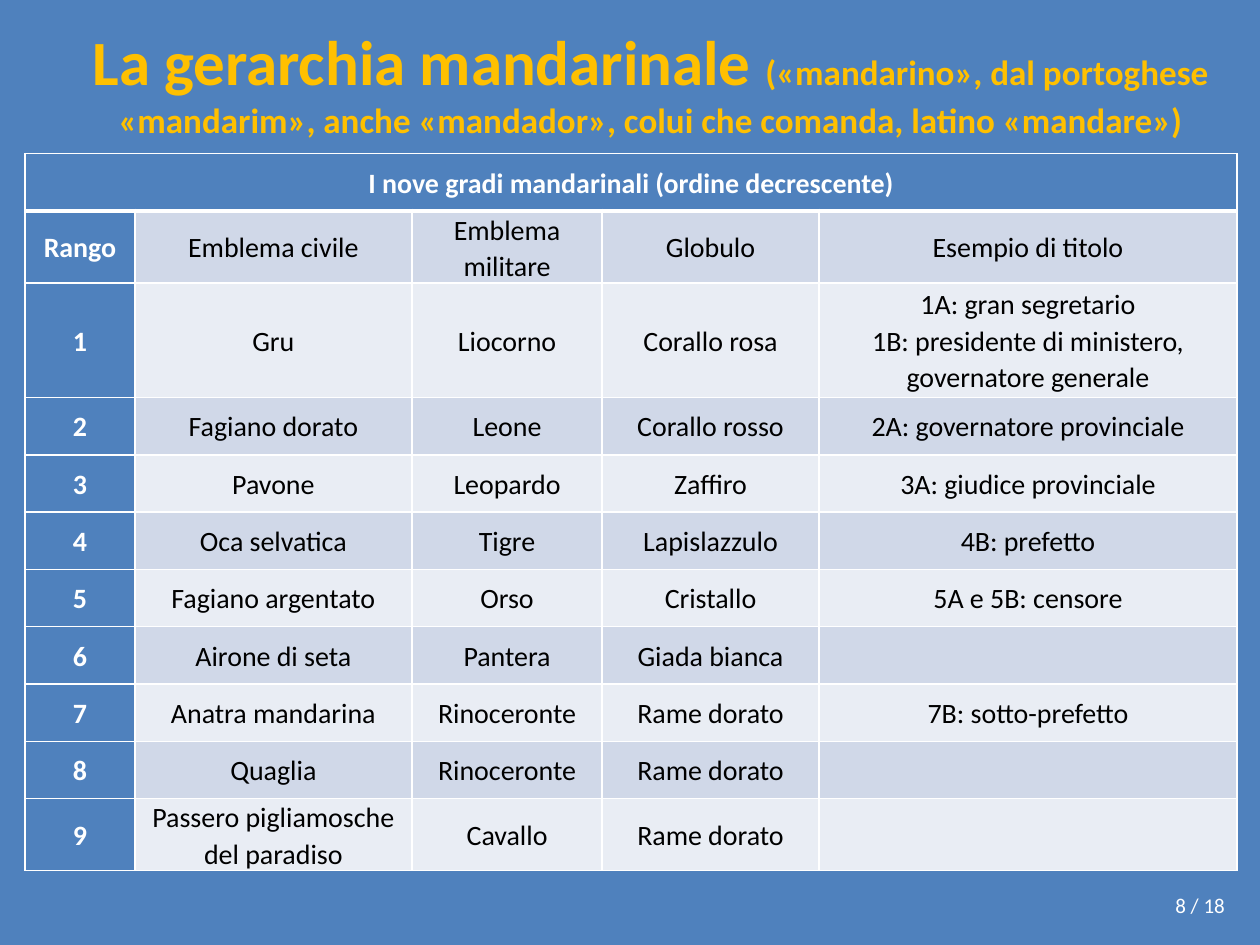
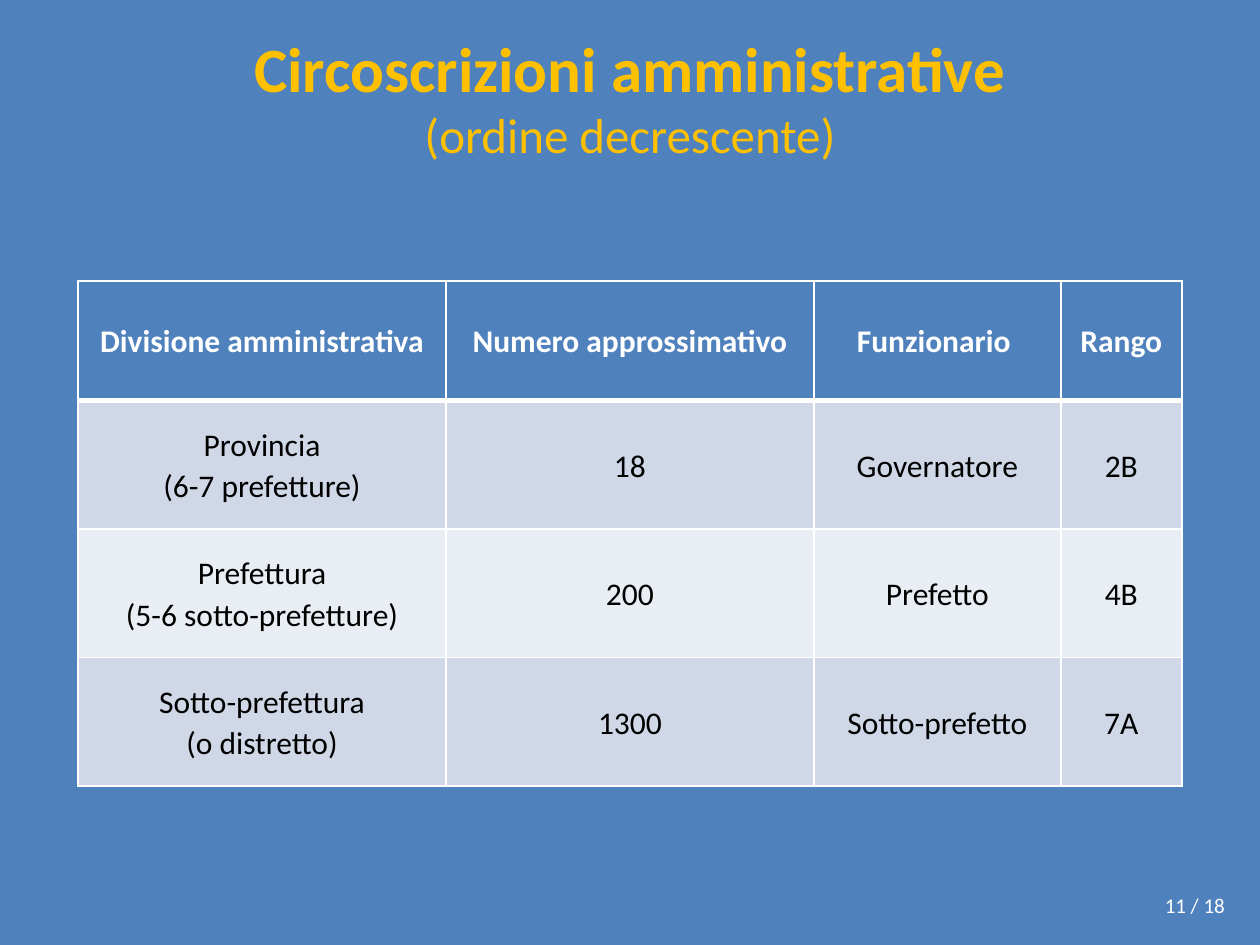
from dataclasses import dataclass

from lxml.etree import SubElement
from pptx import Presentation
from pptx.dml.color import RGBColor as Color
from pptx.enum.text import MSO_ANCHOR as Anchor, PP_ALIGN as Align
from pptx.oxml.ns import qn
from pptx.util import Inches, Pt


@dataclass(frozen=True)
class Theme:
    font: str = "Calibri"
    blue: str = "4F81BD"
    gold: str = "FFC000"
    white: str = "FFFFFF"
    black: str = "000000"
    bands: tuple = ("D0D8E8", "E9EDF4")
    title_size: int = 36
    subtitle_size: int = 28
    note_size: int = 20
    table_size: int = 18
    dense_table_size: int = 16
    page_size: int = 12
    line_spacing: float = 1.07
    thin_line: int = 1
    thick_line: int = 3


THEME = Theme()
PAGE_COUNT = 18

RANK_COLUMNS = (0.87, 2.2, 1.51, 1.72, 3.32)
RANK_ROW = 0.91 / 2
RANK_ROWS = [
    ("I nove gradi mandarinali (ordine decrescente)", "", "", "", ""),
    ("Rango", "Emblema civile", "Emblema militare", "Globulo", "Esempio di titolo"),
    ("1", "Gru", "Liocorno", "Corallo rosa",
     "1A: gran segretario\n1B: presidente di ministero, governatore generale"),
    ("2", "Fagiano dorato", "Leone", "Corallo rosso", "2A: governatore provinciale"),
    ("3", "Pavone", "Leopardo", "Zaffiro", "3A: giudice provinciale"),
    ("4", "Oca selvatica", "Tigre", "Lapislazzulo", "4B: prefetto"),
    ("5", "Fagiano argentato", "Orso", "Cristallo", "5A e 5B: censore"),
    ("6", "Airone di seta", "Pantera", "Giada bianca", ""),
    ("7", "Anatra mandarina", "Rinoceronte", "Rame dorato", "7B: sotto-prefetto"),
    ("8", "Quaglia", "Rinoceronte", "Rame dorato", ""),
    ("9", "Passero pigliamosche del paradiso", "Cavallo", "Rame dorato", ""),
]

DIVISION_COLUMNS = (2.92, 2.92, 1.96, 0.96)
DIVISION_ROWS = [
    ("Divisione amministrativa", "Numero approssimativo", "Funzionario ", "Rango"),
    ("Provincia\n(6-7 prefetture)", "18", "Governatore", "2B"),
    ("Prefettura\n(5-6 sotto-prefetture)", "200", "Prefetto", "4B"),
    ("Sotto-prefettura\n(o distretto)", "1300", "Sotto-prefetto", "7A"),
]


def add_run(paragraph, text, size, color, bold=False):
    run = paragraph.add_run()
    run.text = text
    run.font.name = THEME.font
    run.font.size = Pt(size)
    run.font.bold = bold
    run.font.color.rgb = Color.from_string(color)


def add_text_box(slide, box, alignment):
    """Add a middle-anchored text box and return its first paragraph."""
    frame = slide.shapes.add_textbox(*map(Inches, box)).text_frame
    frame.word_wrap = True
    frame.vertical_anchor = Anchor.MIDDLE
    paragraph = frame.paragraphs[0]
    paragraph.alignment = alignment
    return paragraph


def add_title(slide, box, title, detail, detail_size, detail_bold, new_line):
    paragraph = add_text_box(slide, box, Align.CENTER)
    add_run(paragraph, title, THEME.title_size, THEME.gold, bold=True)
    if new_line:
        paragraph.add_line_break()
    add_run(paragraph, detail, detail_size, THEME.gold, detail_bold)


def add_page_number(slide, box, number):
    paragraph = add_text_box(slide, box, Align.RIGHT)
    add_run(paragraph, f"{number} / {PAGE_COUNT}", THEME.page_size, THEME.white)


def set_borders(cell, top, bottom):
    properties = cell._tc.get_or_add_tcPr()
    widths = {"lnL": THEME.thin_line, "lnR": THEME.thin_line, "lnT": top, "lnB": bottom}
    for side, width in widths.items():
        line = SubElement(properties, qn(f"a:{side}"), w=str(Pt(width)))
        fill = SubElement(line, qn("a:solidFill"))
        SubElement(fill, qn("a:srgbClr"), val=THEME.white)


def fill_cell(cell, text, size, background, is_header):
    cell.fill.solid()
    cell.fill.fore_color.rgb = Color.from_string(background)
    cell.vertical_anchor = Anchor.MIDDLE
    if not text:
        return
    frame = cell.text_frame
    for index, line in enumerate(text.split("\n")):
        paragraph = frame.add_paragraph() if index else frame.paragraphs[0]
        paragraph.alignment = Align.CENTER
        paragraph.line_spacing = THEME.line_spacing
        color = THEME.white if is_header else THEME.black
        add_run(paragraph, line, size, color, is_header)


def add_banded_table(slide, box, rows, columns, heights, size, header_column=False, margins=None):
    table = slide.shapes.add_table(len(rows), len(columns), *map(Inches, box)).table
    for column, width in zip(table.columns, columns):
        column.width = Inches(width)
    for row, height in zip(table.rows, heights):
        row.height = Inches(height)
    for row_index, texts in enumerate(rows):
        for column_index, text in enumerate(texts):
            cell = table.cell(row_index, column_index)
            set_borders(cell,
                        top=THEME.thick_line if row_index == 1 else THEME.thin_line,
                        bottom=THEME.thick_line if row_index == 0 else THEME.thin_line)
            is_header = row_index == 0 or (header_column and column_index == 0)
            background = THEME.blue if is_header else THEME.bands[(row_index - 1) % 2]
            if margins and text:
                cell.margin_left = cell.margin_right = Inches(margins[0])
                cell.margin_top = cell.margin_bottom = Inches(margins[1])
            fill_cell(cell, text, size, background, is_header)
    return table


def add_slide(presentation, page):
    """Add a blank slide with the shared background and page number."""
    slide = presentation.slides.add_slide(presentation.slide_layouts[6])
    slide.background.fill.solid()
    slide.background.fill.fore_color.rgb = Color.from_string(THEME.blue)
    add_page_number(slide, (9.02, 6.98, 0.8, 0.4), page)
    return slide


def build_rank_slide(presentation):
    slide = add_slide(presentation, 8)
    add_title(slide, (0.51, 0.18, 9.31, 0.93), "La gerarchia mandarinale ",
              "(«mandarino», dal portoghese «mandarim», anche «mandador», "
              "colui che comanda, latino «mandare»)",
              THEME.note_size, detail_bold=True, new_line=False)
    # The first rank has two titles and takes a double row
    heights = [RANK_ROW * (2 if row[0] == "1" else 1) for row in RANK_ROWS]
    table = add_banded_table(slide, (0.2, 1.22, 9.62, 5.67), RANK_ROWS, RANK_COLUMNS, heights,
                             THEME.dense_table_size, header_column=True, margins=(0.07, 0))
    # Heading across all columns
    table.cell(0, 0).merge(table.cell(0, len(RANK_COLUMNS) - 1))


def build_division_slide(presentation):
    slide = add_slide(presentation, 11)
    add_title(slide, (0.5, 0.3, 9, 0.93), "Circoscrizioni amministrative",
              "(ordine decrescente)", THEME.subtitle_size, detail_bold=False, new_line=True)
    heights = [0.95] + [1.02] * (len(DIVISION_ROWS) - 1)
    add_banded_table(slide, (0.62, 2.23, 8.75, 4), DIVISION_ROWS, DIVISION_COLUMNS, heights,
                     THEME.table_size)


def main():
    presentation = Presentation()
    presentation.slide_width = Inches(10)
    presentation.slide_height = Inches(7.5)
    build_rank_slide(presentation)
    build_division_slide(presentation)
    presentation.save("out.pptx")


if __name__ == "__main__":
    main()
